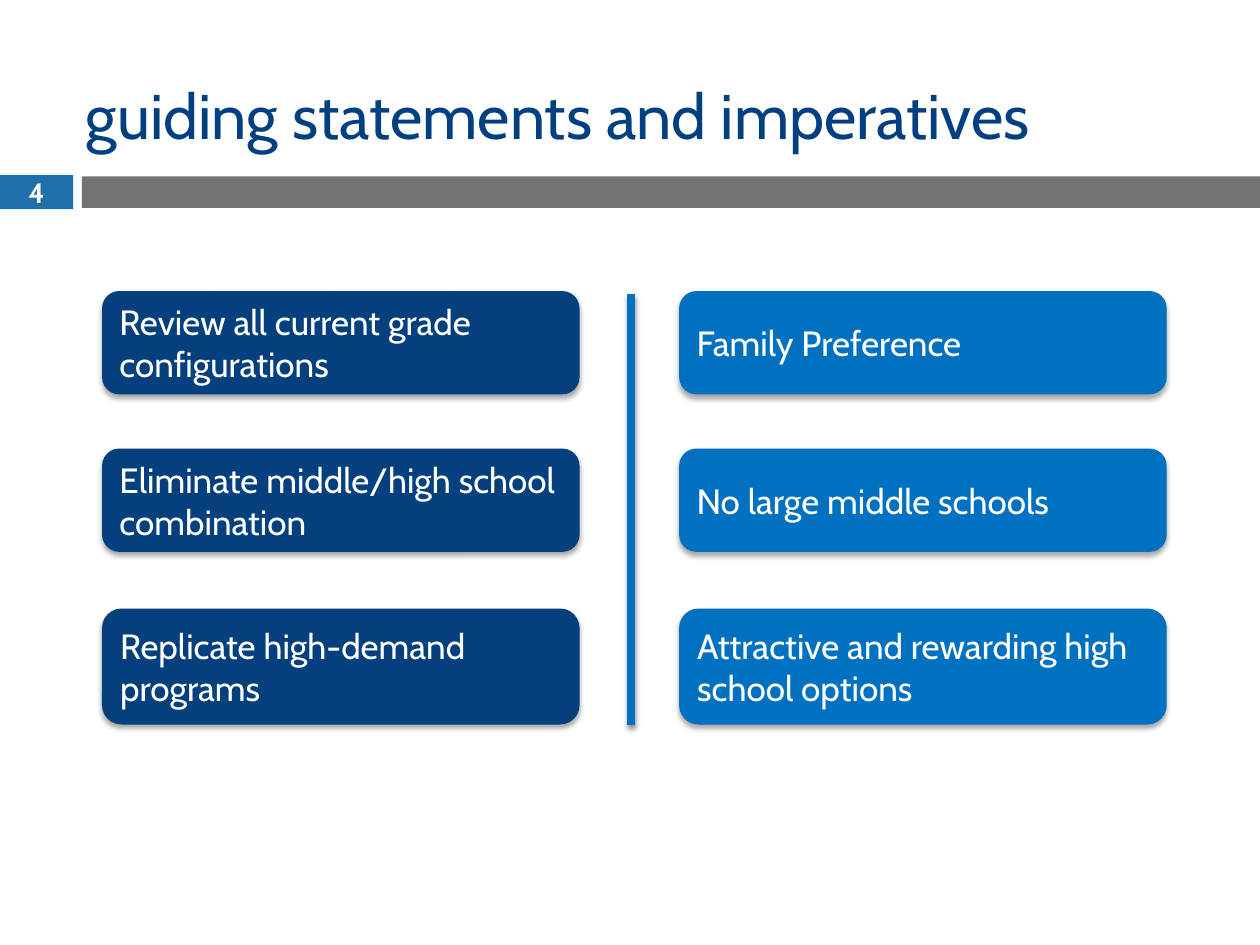
import pptx
import pptx.util
import pptx.dml.color
import pptx.enum.shapes
import pptx.enum.text
import pptx.oxml
import pptx.oxml.ns

Inches, Pt = pptx.util.Inches, pptx.util.Pt
Shape = pptx.enum.shapes.MSO_SHAPE
Align = pptx.enum.text.PP_ALIGN
Anchor = pptx.enum.text.MSO_ANCHOR

FONT = "Cabin"
COLORS = {
    "title": "004080",
    "tab": "1F6FAA",
    "bar": "737373",
    "statement": "04407E",
    "imperative": "0070C0",
    "white": "FFFFFF",
    "shadow": "000000",
}
TITLE = "guiding statements and imperatives"
PAGE_NUMBER = "4"
COLUMNS = [
    ("statement", 0.81, 3.79, [
        "Review all current grade configurations",
        "Eliminate middle/high school combination",
        "Replicate high-demand programs",
    ]),
    ("imperative", 5.39, 3.87, [
        "Family Preference",
        "No large middle schools",
        "Attractive and rewarding high school options",
    ]),
]
ROWS = [(2.31, 0.82), (3.56, 0.82), (4.83, 0.92)]


def rgb(name):
    return pptx.dml.color.RGBColor.from_string(COLORS[name])


def write(box, text, size, color="white", bold=False, align=Align.LEFT):
    frame = box.text_frame
    frame.word_wrap = True
    frame.vertical_anchor = Anchor.MIDDLE
    para = frame.paragraphs[0]
    para.alignment = align
    span = para.add_run()
    span.text = text
    span.font.name = FONT
    span.font.size = Pt(size)
    span.font.bold = bold
    span.font.color.rgb = rgb(color)


def add_block(page, kind, left, top, width, height, color):
    block = page.shapes.add_shape(
        kind, Inches(left), Inches(top), Inches(width), Inches(height))
    block.shadow.inherit = False
    block.fill.solid()
    block.fill.fore_color.rgb = rgb(color)
    block.line.fill.background()
    return block


def add_shadow(item, blur, distance, opacity):
    properties = item._element.spPr
    for old in properties.findall(pptx.oxml.ns.qn("a:effectLst")):
        properties.remove(old)
    properties.append(pptx.oxml.parse_xml(
        f'<a:effectLst {pptx.oxml.ns.nsdecls("a")}>'
        f'<a:outerShdw blurRad="{Pt(blur)}" dist="{Pt(distance)}" '
        f'dir="5400000" rotWithShape="0"><a:srgbClr val="{COLORS["shadow"]}">'
        f'<a:alpha val="{opacity * 1000}"/></a:srgbClr></a:outerShdw>'
        f'</a:effectLst>'))


def main():
    deck = pptx.Presentation()
    deck.slide_width, deck.slide_height = Inches(10), Inches(7.5)
    page = deck.slides.add_slide(deck.slide_layouts[5])

    title = page.shapes.title
    title.left, title.top = Inches(0.58), Inches(0.62)
    title.width, title.height = Inches(8.76), Inches(0.58)
    write(title, TITLE, 36, color="title")

    add_block(page, Shape.RECTANGLE, 0.65, 1.4, 9.35, 0.25, "bar")
    tab = add_block(page, Shape.RECTANGLE, 0, 1.39, 0.58, 0.27, "tab")
    write(tab, PAGE_NUMBER, 16, bold=True, align=Align.CENTER)

    for color, left, width, texts in COLUMNS:
        for text, (top, height) in zip(texts, ROWS):
            card = add_block(page, Shape.ROUNDED_RECTANGLE,
                             left, top, width, height, color)
            add_shadow(card, 3, 2, 35)
            write(card, text, 20)

    divider = page.shapes.add_connector(
        pptx.enum.shapes.MSO_CONNECTOR.STRAIGHT,
        Inches(5.01), Inches(2.33), Inches(5.01), Inches(5.75))
    divider.line.color.rgb = rgb("imperative")
    divider.line.width = Pt(4.5)
    add_shadow(divider, 3, 2.4, 45)

    deck.save("out.pptx")


if __name__ == "__main__":
    main()
